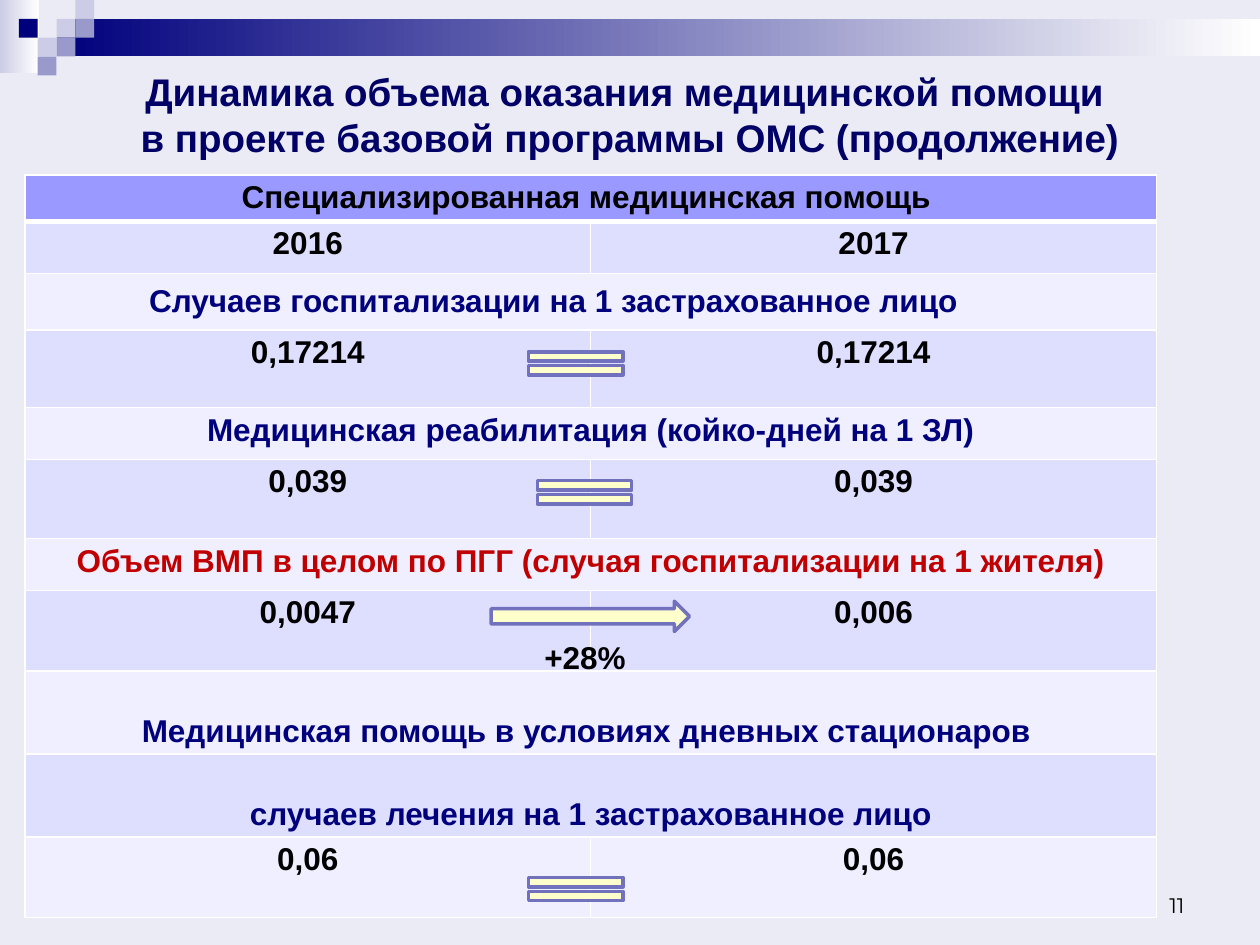
from lxml import etree
from pptx import Presentation
from pptx import util as u
from pptx.dml.color import RGBColor
from pptx.enum import shapes, text
from pptx.oxml import ns

NAVY, BLACK, RED, WHITE = "00007D", "000000", "C00000", "FFFFFF"
LILAC, VIOLET = "CCCCE6", "9999CC"
HEADER, DARK, LIGHT = "9999FF", "DEDEFF", "EFEFFF"


def rgb(value):
    return RGBColor.from_string(value)


class Builder:
    """Holds the style and the current slide."""
    font, size = "Arial", 18
    symbol_fill, symbol_line = "FFFFCC", "7171BD"

    def __init__(self, slide):
        self.s = slide

    def background(self, color):
        fill = self.s.background.fill
        fill.solid()
        fill.fore_color.rgb = rgb(color)

    def add_text(self, p, content, color=BLACK, size=None, font=None, bold=True,
                 align=text.PP_ALIGN.CENTER):
        p.alignment = align
        for i, line in enumerate(content.split("\n")):
            if i:
                p.add_line_break()
            r = p.add_run()
            r.text = line
            r.font.name, r.font.size = font or self.font, u.Pt(size or self.size)
            r.font.bold, r.font.color.rgb = bold, rgb(color)

    def title(self, content, box, **style):
        sp = self.s.shapes.title
        sp.left, sp.top, sp.width, sp.height = map(u.Cm, box)
        tf = sp.text_frame
        tf.auto_size = text.MSO_AUTO_SIZE.NONE
        tf.vertical_anchor = text.MSO_ANCHOR.MIDDLE
        self.add_text(tf.paragraphs[0], content, **style)

    def textbox(self, content, box, anchor=text.MSO_ANCHOR.TOP, **style):
        tf = self.s.shapes.add_textbox(*map(u.Cm, box)).text_frame
        tf.word_wrap, tf.vertical_anchor = True, anchor
        self.add_text(tf.paragraphs[0], content, **style)

    def shape(self, kind, box):
        sp = self.s.shapes.add_shape(kind, *map(u.Cm, box))
        sp.shadow.inherit = False
        return sp

    def block(self, box, color, fade_to=None):
        sp = self.shape(shapes.MSO_SHAPE.RECTANGLE, box)
        sp.line.fill.background()
        if fade_to:
            sp.fill.gradient()
            sp.fill.gradient_angle = 0
            for stop, c in zip(sp.fill.gradient_stops, (color, fade_to)):
                stop.color.rgb = rgb(c)
        else:
            sp.fill.solid()
            sp.fill.fore_color.rgb = rgb(color)

    def symbol(self, kind, box):
        sp = self.shape(kind, box)
        sp.fill.solid()
        sp.fill.fore_color.rgb = rgb(self.symbol_fill)
        sp.line.color.rgb = rgb(self.symbol_line)
        sp.line.width = u.Pt(2)

    def borders(self, cell, **widths):
        tc_pr = cell._tc.get_or_add_tcPr()
        for side in "LRTB":
            ln = etree.SubElement(tc_pr, ns.qn("a:ln" + side),
                                  w=str(u.Pt(widths.get(side, 1))))
            fill = etree.SubElement(ln, ns.qn("a:solidFill"))
            etree.SubElement(fill, ns.qn("a:srgbClr"), val=WHITE)

    def table(self, rows, left, top, width):
        """Each row: height, fill, texts, text colour, anchor, extra right margin."""
        height = sum(row[0] for row in rows)
        table = self.s.shapes.add_table(
            len(rows), 2, *map(u.Cm, (left, top, width, height))).table
        for i, (h, fill, texts, color, anchor, extra) in enumerate(rows):
            table.rows[i].height = u.Cm(h)
            cells = list(table.rows[i].cells)
            if len(texts) == 1:
                cells[0].merge(cells[1])
            for cell in cells:
                self.borders(cell, T=3 if i == 1 else 1, B=3 if i == 0 else 1)
                cell.fill.solid()
                cell.fill.fore_color.rgb = rgb(fill)
                cell.margin_top = cell.margin_bottom = u.Cm(0.1)
                cell.margin_right = u.Cm(0.25 + extra)
                cell.vertical_anchor = anchor
            for cell, content in zip(cells, texts):
                self.add_text(cell.text_frame.paragraphs[0], content, color)


def main():
    prs = Presentation()
    prs.slide_width, prs.slide_height = u.Cm(25.4), u.Cm(19.05)
    b = Builder(prs.slides.add_slide(prs.slide_layouts[5]))
    b.background("EBEBF5")

    # Top band with the pattern of small squares
    b.block((0, 0, 0.78, 1.47), LILAC, fade_to=WHITE)
    b.block((1.14, 0.38, 24.26, 0.76), NAVY, fade_to=WHITE)
    side = 0.38
    squares = [(3, 1, LILAC), (4, 0, LILAC), (4, 1, VIOLET), (2, 2, LILAC),
               (1, 1, NAVY), (3, 2, VIOLET), (2, 3, VIOLET)]
    for col, row, color in squares:
        b.block((col * side, row * side, side, side), color)

    # Title
    b.title("Динамика объема оказания медицинской помощи \n"
            "в проекте базовой программы ОМС (продолжение)",
            (1.27, 1.27, 22.86, 2.06), color="000066", size=22)

    # Table of volumes
    top, mid, low = text.MSO_ANCHOR.TOP, text.MSO_ANCHOR.MIDDLE, text.MSO_ANCHOR.BOTTOM
    b.table([
        (0.93, HEADER, ["Специализированная медицинская помощь "], BLACK, top, 0),
        (1.05, DARK, ["2016", "2017"], BLACK, top, 0),
        (1.14, LIGHT, ["Случаев госпитализации на 1 застрахованное лицо"], NAVY, mid, 1.5),
        (1.57, DARK, ["0,17214", "0,17214"], BLACK, top, 0),
        (1.04, LIGHT, ["Медицинская реабилитация (койко-дней на 1 ЗЛ)"], NAVY, top, 0),
        (1.6, DARK, ["0,039", "0,039"], BLACK, top, 0),
        (1.04, LIGHT, ["Объем ВМП в целом по ПГГ (случая госпитализации на 1 жителя)"],
         RED, top, 0),
        (1.63, DARK, ["0,0047", "0,006"], BLACK, top, 0),
        (1.67, LIGHT, ["Медицинская помощь в условиях дневных стационаров "], NAVY, low, 0),
        (1.67, DARK, ["случаев лечения на 1 застрахованное лицо"], NAVY, low, 0),
        (1.63, LIGHT, ["0,06", "0,06"], BLACK, top, 0),
    ], 0.5, 3.53, 22.81)

    # Slide number
    b.textbox("11", (18.21, 17.35, 5.92, 1.27), anchor=low, size=12,
              font="Montserrat", bold=False, align=text.PP_ALIGN.RIGHT)

    # Signs between the two years
    for x, y in [(10.31, 6.93), (10.49, 9.53), (10.31, 17.53)]:
        b.symbol(shapes.MSO_SHAPE.MATH_EQUAL, (x, y, 2.59, 0.79))
    b.symbol(shapes.MSO_SHAPE.RIGHT_ARROW, (9.9, 12.12, 4, 0.61))
    b.textbox("+28%", (9.7, 12.73, 4.19, 1.02))

    prs.save("out.pptx")


if __name__ == "__main__":
    main()
